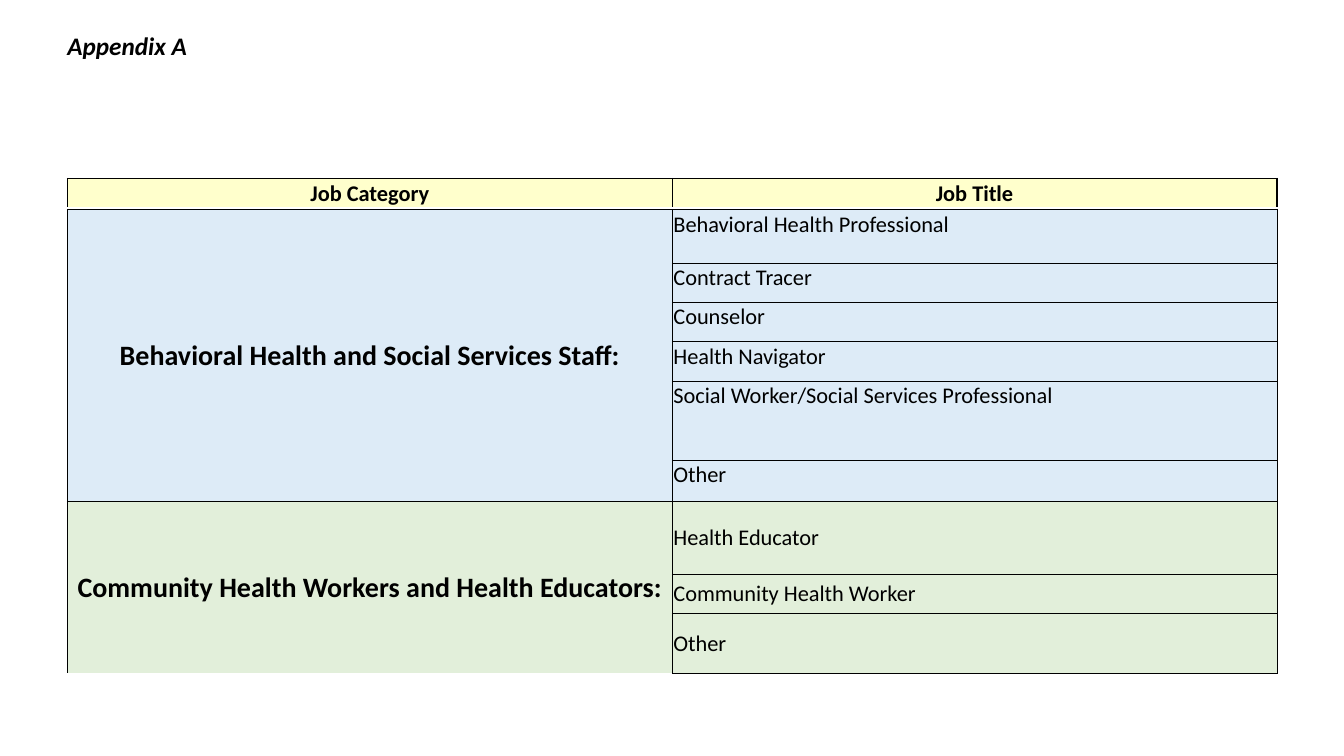
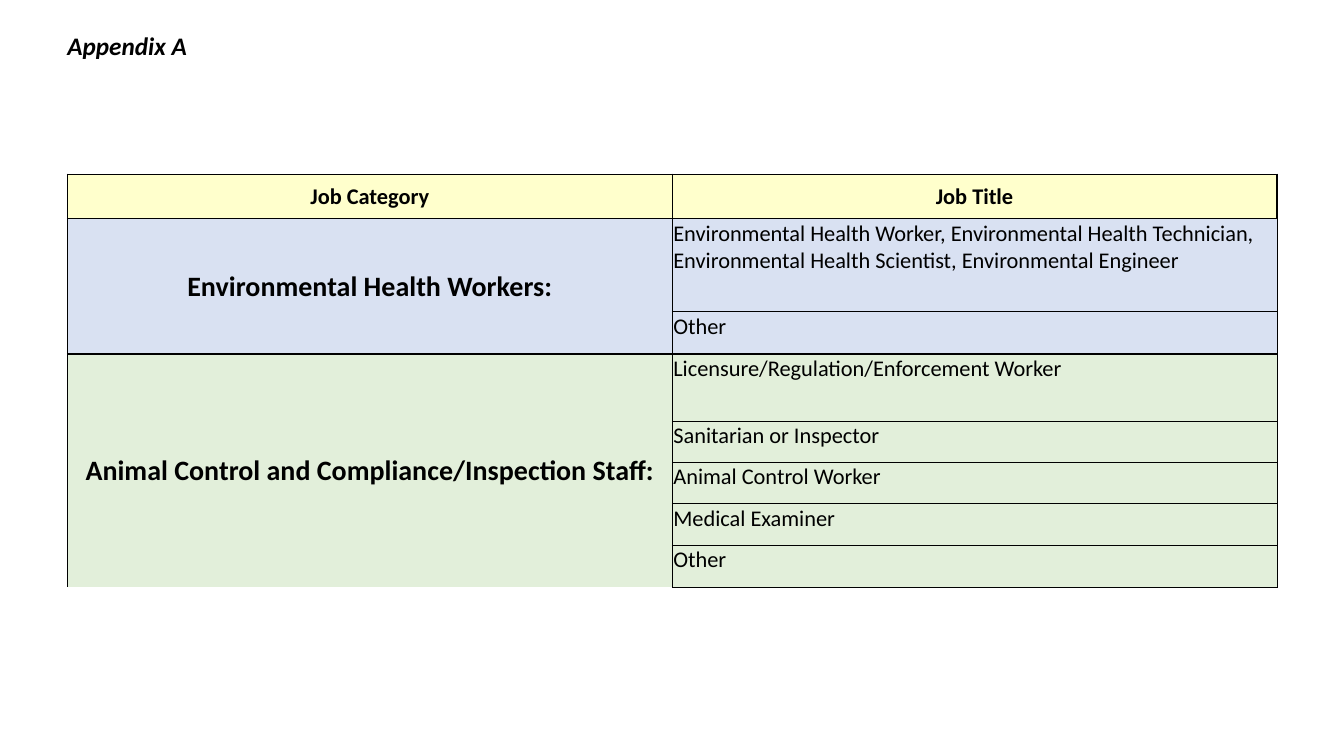
from lxml import etree
from pptx import Presentation
from pptx import util as u
from pptx.dml.color import RGBColor
from pptx.enum import text
from pptx.oxml import ns

COLORS = {
    "ink": "000000",
    "header": "FFFFCC",
    "sky": "DDEBF7",
    "periwinkle": "D9E1F2",
    "green": "E2EFDA",
}
FONT = "Calibri"
LEFT = u.Cm(1.7)
COLUMN = u.Cm(15.24)
THIN, THICK = 0.5, 1

FORMATS = {
    "title": {"size": u.Pt(18), "bold": True, "italic": True},
    "header": {"size": u.Pt(16), "bold": True},
    "category": {"size": u.Pt(20), "bold": True},
    "job": {"size": u.Pt(16), "bold": False},
}
CELL_FRAME = {
    "margin_left": u.Cm(0.03),
    "margin_right": u.Cm(0.03),
    "margin_top": u.Cm(0.03),
    "margin_bottom": 0,
}
TITLE_FRAME = {
    "margin_left": 0,
    "margin_right": 0,
    "margin_top": 0,
    "margin_bottom": 0,
    "word_wrap": True,
}
PLAIN_TABLE = {"first_row": False, "horz_banding": False}

TOP, MIDDLE = text.MSO_ANCHOR.TOP, text.MSO_ANCHOR.MIDDLE

APPENDIX = [
    {
        "header": (4.5, 0.71),
        "top": 5.28,
        "groups": [
            ("Behavioral Health and Social Services Staff:", "sky", TOP, [
                ("Behavioral Health Professional", 1.35),
                ("Contract Tracer", 0.99),
                ("Counselor", 0.99),
                ("Health Navigator", 0.99),
                ("Social Worker/Social Services Professional", 1.99),
                ("Other", 1.04),
            ]),
            ("Community Health Workers and Health Educators:", "green", MIDDLE, [
                ("Health Educator", 1.83),
                ("Community Health Worker", 0.99),
                ("Other", 1.52),
            ]),
        ],
    },
    {
        "header": (4.39, 1.1),
        "top": 5.51,
        "groups": [
            ("Environmental Health Workers:", "periwinkle", TOP, [
                ("Environmental Health Worker, Environmental Health Technician, "
                 "Environmental Health Scientist, Environmental Engineer", 2.34),
                ("Other", 1.07),
            ]),
            ("Animal Control and Compliance/Inspection Staff:", "green", TOP, [
                ("Licensure/Regulation/Enforcement Worker", 1.69),
                ("Sanitarian or Inspector", 1.04),
                ("Animal Control Worker", 1.04),
                ("Medical Examiner", 1.04),
                ("Other", 1.07),
            ]),
        ],
    },
]


def apply(target, values):
    for name, value in values.items():
        setattr(target, name, value)


def write(paragraph, wording, style):
    paragraph.text = wording
    paragraph.font.name = FONT
    paragraph.font.color.rgb = RGBColor.from_string(COLORS["ink"])
    apply(paragraph.font, FORMATS[style])


def set_borders(cell, **widths):
    properties = cell._tc.get_or_add_tcPr()
    for side in "LRTB":
        line = etree.SubElement(properties, ns.qn(f"a:ln{side}"))
        width = widths.get(side)
        if width:
            line.set("w", str(u.Pt(width)))
            fill = etree.SubElement(line, ns.qn("a:solidFill"))
            etree.SubElement(fill, ns.qn("a:srgbClr"), val=COLORS["ink"])
        else:
            etree.SubElement(line, ns.qn("a:noFill"))


def fill_cell(cell, wording, style, color, anchor, borders):
    apply(cell, CELL_FRAME)
    cell.vertical_anchor = anchor
    paragraph = cell.text_frame.paragraphs[0]
    write(paragraph, wording, style)
    paragraph.alignment = (
        text.PP_ALIGN.LEFT if style == "job" else text.PP_ALIGN.CENTER
    )
    set_borders(cell, **borders)
    cell.fill.solid()
    cell.fill.fore_color.rgb = RGBColor.from_string(COLORS[color])


def add_plain_table(slide, top, heights):
    table = slide.shapes.add_table(
        len(heights), 2, LEFT, u.Cm(top), 2 * COLUMN, u.Cm(sum(heights))
    ).table
    apply(table, PLAIN_TABLE)
    for row, height in zip(table.rows, heights):
        row.height = u.Cm(height)
    return table


def add_title(slide, wording):
    frame = slide.shapes.add_textbox(
        LEFT, u.Cm(0.76), 2 * COLUMN, u.Cm(0.77)
    ).text_frame
    apply(frame, TITLE_FRAME)
    write(frame.paragraphs[0], wording, "title")


def add_header(slide, top, height):
    header = add_plain_table(slide, top, [height])
    borders = {"L": THICK, "R": THICK, "T": THICK}
    for column, wording in enumerate(["Job Category", "Job Title"]):
        fill_cell(header.cell(0, column), wording, "header", "header", MIDDLE, borders)


def add_jobs(slide, top, groups):
    heights = [height for *_, jobs in groups for _, height in jobs]
    table = add_plain_table(slide, top, heights)
    start = 0
    for category, color, anchor, jobs in groups:
        last = len(jobs) - 1
        for index, (job, _) in enumerate(jobs):
            first_edge = THICK if index == 0 else None
            last_edge = THICK if index == last else None
            row = start + index
            fill_cell(
                table.cell(row, 0), category if index == 0 else "",
                "category", color, MIDDLE,
                {"L": THICK, "R": THIN, "T": first_edge, "B": last_edge},
            )
            fill_cell(
                table.cell(row, 1), job, "job", color, anchor,
                {"L": THIN, "R": THIN,
                 "T": first_edge or THIN, "B": last_edge or THIN},
            )
        table.cell(start, 0).merge(table.cell(start + last, 0))
        start += len(jobs)


def main():
    deck = Presentation()
    deck.slide_width, deck.slide_height = u.Cm(33.87), u.Cm(19.05)
    for page in APPENDIX:
        slide = deck.slides.add_slide(deck.slide_layouts[6])
        add_title(slide, "Appendix A")
        add_jobs(slide, page["top"], page["groups"])
        add_header(slide, *page["header"])
    deck.save("out.pptx")


if __name__ == "__main__":
    main()
